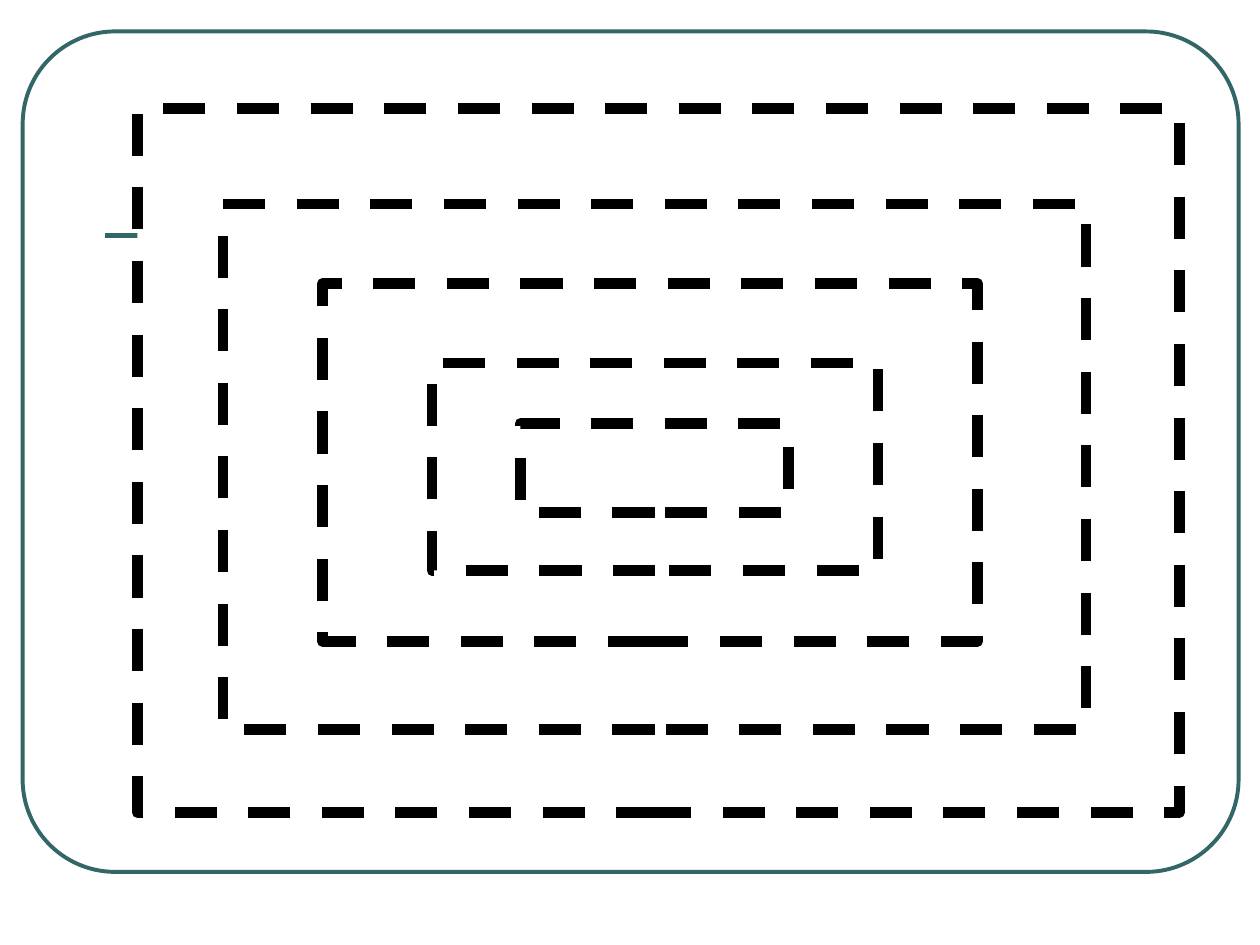
"""Builds a slide of nested dashed rectangles inside a rounded frame."""
from dataclasses import dataclass

from lxml.etree import SubElement
from pptx import Presentation
from pptx.dml.color import RGBColor
from pptx.enum.dml import MSO_LINE
from pptx.enum.shapes import MSO_CONNECTOR, MSO_SHAPE
from pptx.oxml.ns import qn
from pptx.util import Inches, Pt


@dataclass(frozen=True)
class Theme:
    teal: RGBColor = RGBColor(0x33, 0x66, 0x66)
    black: RGBColor = RGBColor(0, 0, 0)
    white: RGBColor = RGBColor(255, 255, 255)
    frame_width: Pt = Pt(2.25)
    rule_width: Pt = Pt(3)
    dash_width: Pt = Pt(6)


theme = Theme()

prs = Presentation()
prs.slide_width, prs.slide_height = Inches(10), Inches(7.5)
slide = prs.slides.add_slide(prs.slide_layouts[6])
shapes = slide.shapes

frame = shapes.add_shape(
    MSO_SHAPE.ROUNDED_RECTANGLE, Inches(0.18), Inches(0.25), Inches(9.65), Inches(6.67)
)
frame.adjustments[0] = 0.11
frame.shadow.inherit = False
frame.fill.background()
frame.line.color.rgb = theme.teal
frame.line.width = theme.frame_width

rule = shapes.add_connector(
    MSO_CONNECTOR.STRAIGHT, Inches(0.83), Inches(1.87), Inches(9.25), Inches(1.87)
)
rule.line.color.rgb = theme.teal
rule.line.width = theme.rule_width
SubElement(rule._element.spPr, qn("a:effectLst"))

nested_bounds = [
    (1.09, 0.86, 8.27, 5.59),
    (1.77, 1.62, 6.85, 4.17),
    (2.56, 2.25, 5.2, 2.84),
    (3.43, 2.88, 3.54, 1.65),
    (4.13, 3.36, 2.13, 0.71),
]
dashed_line = {"width": theme.dash_width, "dash_style": MSO_LINE.DASH}

for bounds in nested_bounds:
    ring = shapes.add_shape(MSO_SHAPE.RECTANGLE, *map(Inches, bounds))
    ring.shadow.inherit = False
    ring.fill.solid()
    ring.fill.fore_color.rgb = theme.white
    ring.line.color.rgb = theme.black
    for attribute, value in dashed_line.items():
        setattr(ring.line, attribute, value)

prs.save("out.pptx")
